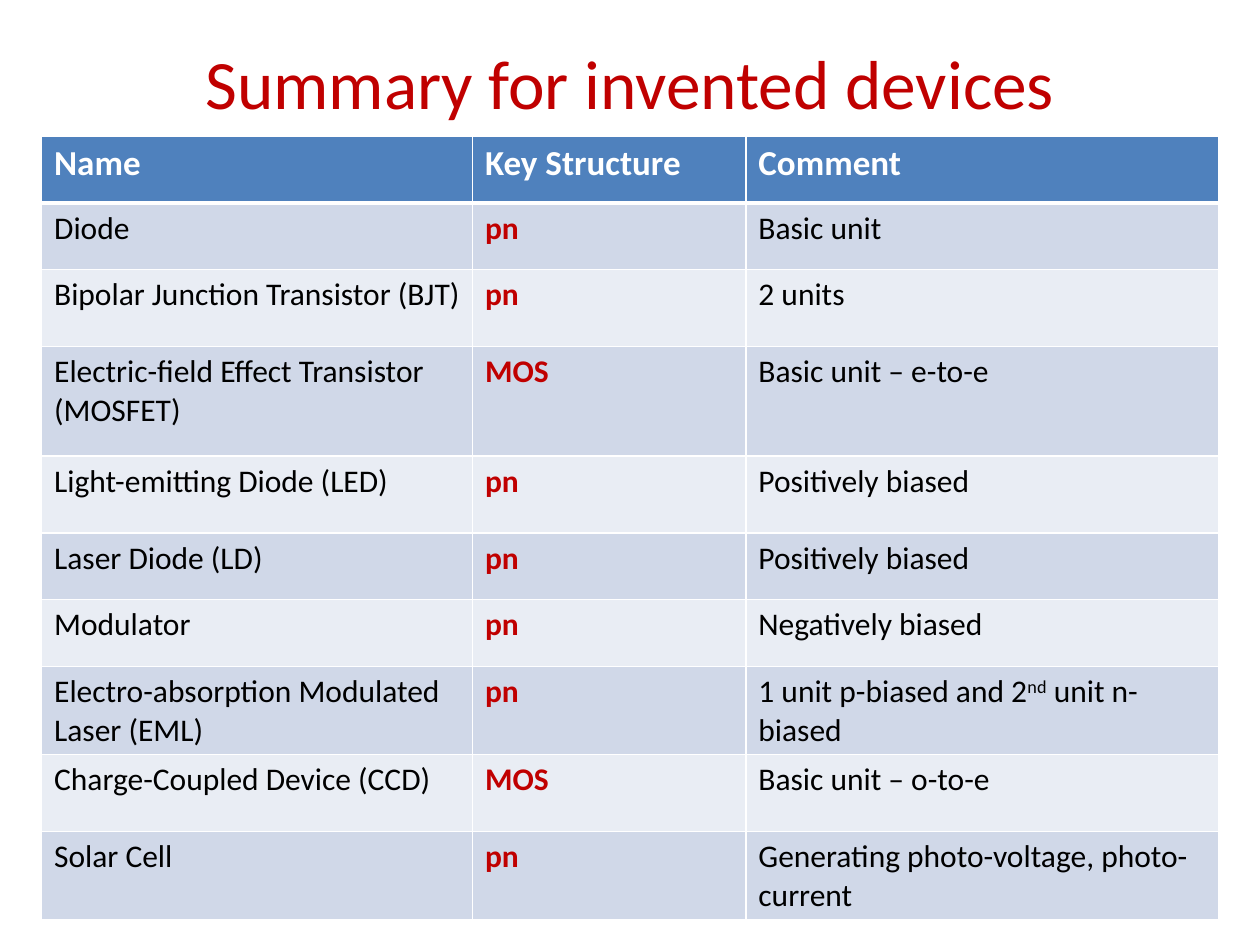
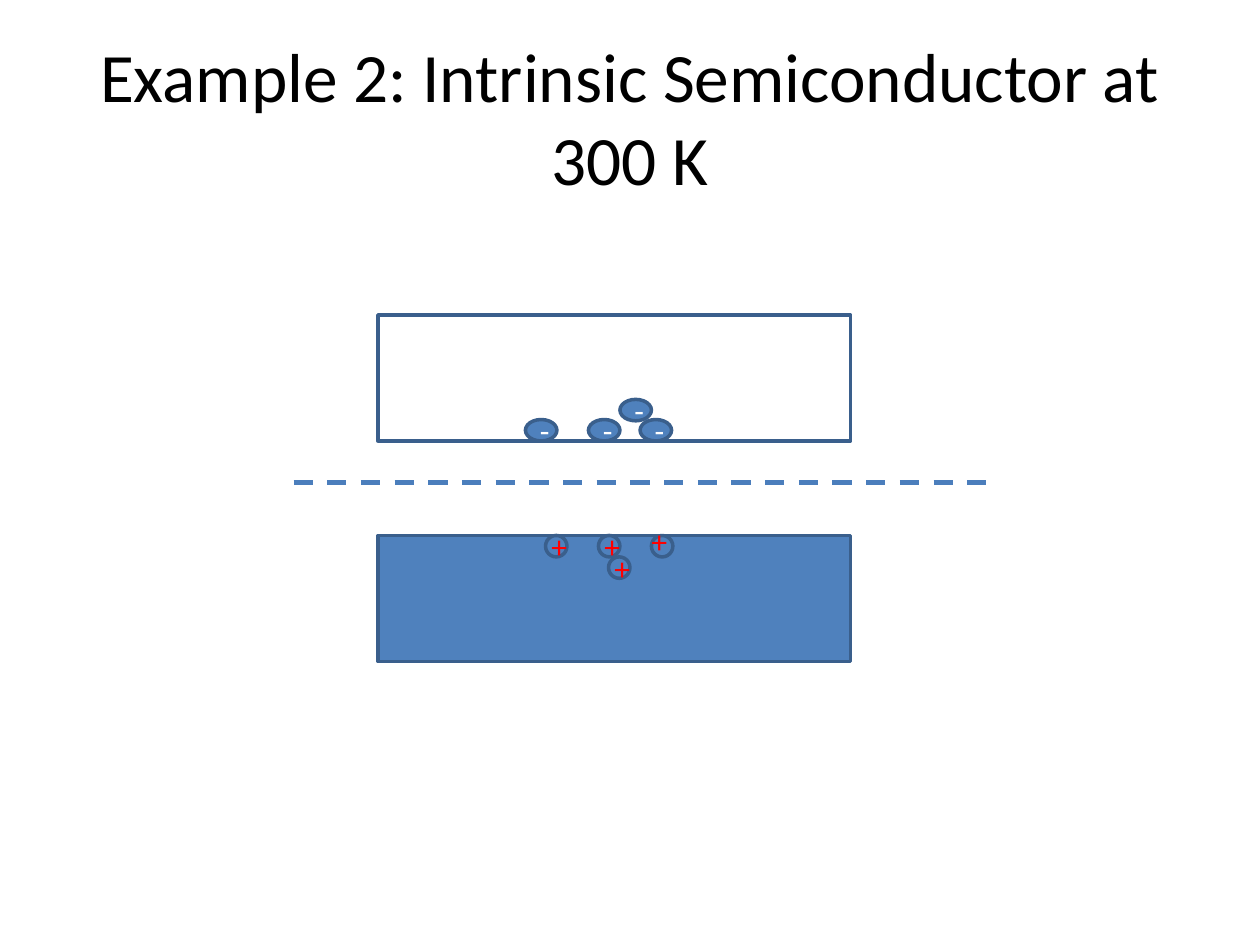
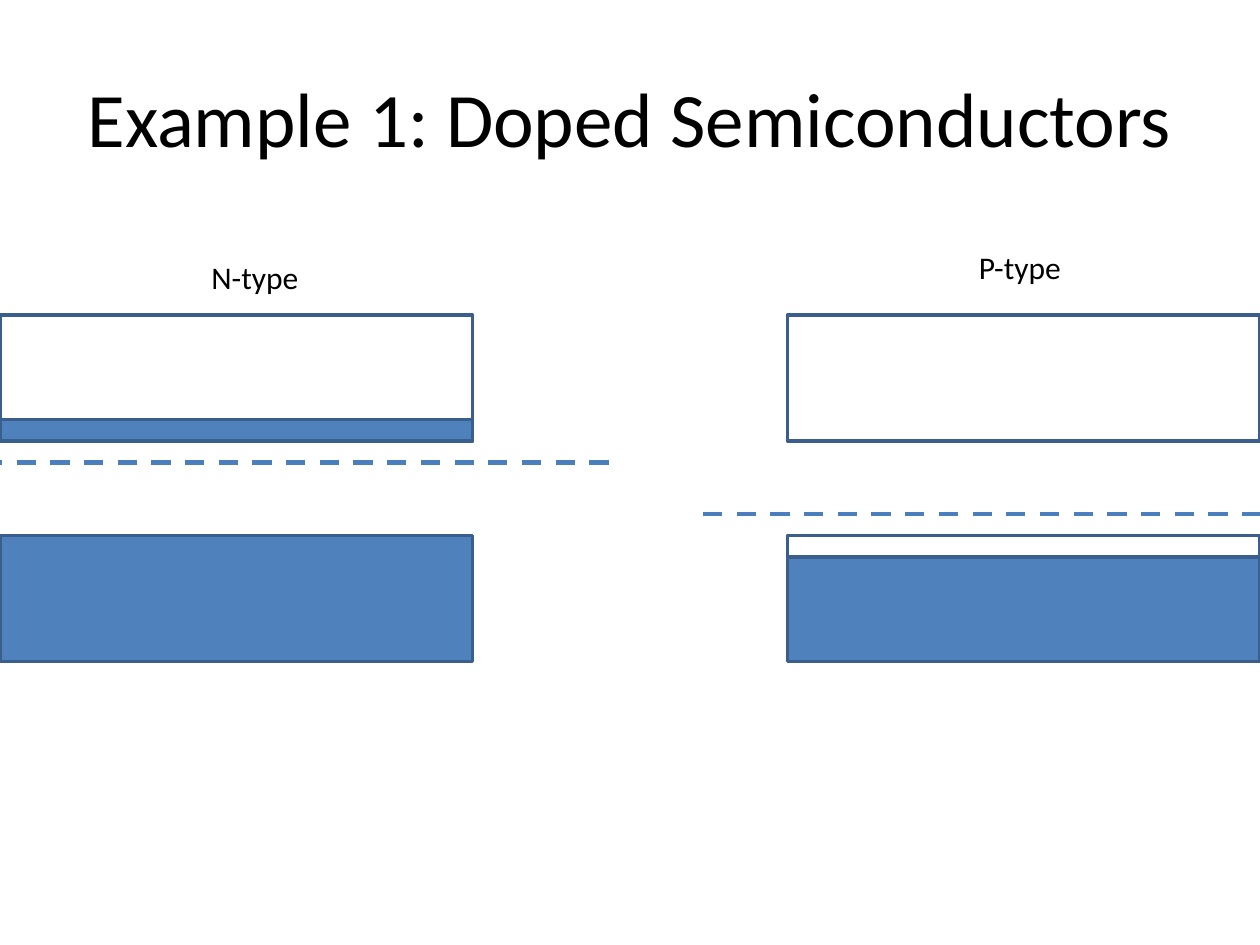
from dataclasses import dataclass

from pptx import Presentation
from pptx import util as u
from pptx.dml.color import RGBColor
from pptx.enum import dml, shapes, text
from pptx.oxml.ns import qn
from lxml import etree


@dataclass(frozen=True)
class Theme:
    font: str = "Calibri"
    black: str = "000000"
    white: str = "FFFFFF"
    accent: str = "C00000"
    hole: str = "FF0000"
    band: str = "4F81BD"
    outline: str = "3A5F8C"
    fermi: str = "4B7EBC"
    odd_row: str = "D0D8E8"
    even_row: str = "E9EDF4"
    title: float = 39.6
    large_title: float = 44
    header: float = 20
    body: float = 18
    outline_width: float = 2
    fermi_width: float = 2.75


THEME = Theme()
CENTER = text.PP_ALIGN.CENTER

# Band geometry, in inches from the diagram's corner
BAND_W, BAND_H = 3.75, 1
VALENCE_Y = 1.75
STRIP_H = 0.17
FERMI_OVERHANG, FERMI_LENGTH = 0.67, 5.5

COLUMN_WIDTHS = (3.42, 2.17, 3.75)
ROW_HEIGHTS = (0.53, 0.53, 0.61, 0.87, 0.61, 0.53, 0.53, 0.69, 0.61, 0.61)
DEVICES = (
    ("Name", "Key Structure", "Comment"),
    ("Diode", "pn", "Basic unit"),
    ("Bipolar Junction Transistor (BJT)", "pn", "2 units"),
    ("Electric-field Effect Transistor\n(MOSFET)", "MOS", "Basic unit – e-to-e"),
    ("Light-emitting Diode (LED)", "pn", "Positively biased"),
    ("Laser Diode (LD)", "pn", "Positively biased"),
    ("Modulator", "pn", "Negatively biased"),
    ("Electro-absorption Modulated Laser (EML)", "pn",
     "1 unit p-biased and 2^nd^ unit n-biased"),
    ("Charge-Coupled Device (CCD)", "MOS", "Basic unit – o-to-e"),
    ("Solar Cell", "pn", "Generating photo-voltage, photo-current"),
)


def inches(*lengths):
    return [u.Inches(length) for length in lengths]


def apply(target, formats):
    for name, value in formats.items():
        setattr(target, name, value)


def write(frame, content, size, color, bold=False, align=None):
    """Fill a text frame; a newline starts a paragraph, ^marks^ raise text."""
    for index, line in enumerate(content.split("\n")):
        paragraph = frame.paragraphs[0] if index == 0 else frame.add_paragraph()
        paragraph.alignment = align
        for part, piece in enumerate(line.split("^")):
            run = paragraph.add_run()
            run.text = piece
            apply(run.font, {"name": THEME.font, "size": u.Pt(size), "bold": bold})
            run.font.color.rgb = RGBColor.from_string(color)
            if part % 2:
                run.font._element.set("baseline", "30000")


def add_title(slide, content, height=1.25, size=THEME.title, color=THEME.black):
    frame = slide.shapes.add_textbox(*inches(0.5, 0.3, 9, height)).text_frame
    apply(frame, {"word_wrap": True, "vertical_anchor": text.MSO_ANCHOR.MIDDLE})
    write(frame, content, size, color, align=CENTER)


def add_label(slide, content, left, top, width):
    frame = slide.shapes.add_textbox(*inches(left, top, width, 0.4)).text_frame
    apply(frame, {"word_wrap": False,
                  "auto_size": text.MSO_AUTO_SIZE.SHAPE_TO_FIT_TEXT})
    write(frame, content, THEME.body, THEME.black)


def add_outlined(parent, kind, box, fill=None):
    part = parent.add_shape(kind, *inches(*box))
    part.shadow.inherit = False
    if fill:
        part.fill.solid()
        part.fill.fore_color.rgb = RGBColor.from_string(fill)
    else:
        part.fill.background()
    part.line.color.rgb = RGBColor.from_string(THEME.outline)
    part.line.width = u.Pt(THEME.outline_width)
    return part


def add_band(parent, left, top, height=BAND_H, fill=None):
    add_outlined(parent, shapes.MSO_SHAPE.RECTANGLE, (left, top, BAND_W, height), fill)


def add_band_diagram(parent, left, top, fermi_y):
    """Filled valence band, empty conduction band and dashed Fermi level."""
    add_band(parent, left, top + VALENCE_Y, fill=THEME.band)
    add_band(parent, left, top)
    start, level = left - FERMI_OVERHANG, top + fermi_y
    fermi = parent.add_connector(shapes.MSO_CONNECTOR.STRAIGHT,
                                 *inches(start, level, start + FERMI_LENGTH, level))
    fermi.line.color.rgb = RGBColor.from_string(THEME.fermi)
    apply(fermi.line, {"width": u.Pt(THEME.fermi_width),
                       "dash_style": dml.MSO_LINE.DASH})
    etree.SubElement(fermi._element.spPr, qn("a:effectLst"))


def add_carrier(slide, sign, left, top, width, color, fill=None, rotation=0):
    carrier = add_outlined(slide.shapes, shapes.MSO_SHAPE.OVAL,
                           (left, top, width, 0.17), fill)
    carrier.rotation = rotation
    write(carrier.text_frame, sign, THEME.body, color, align=CENTER)


def set_borders(cell, widths):
    """Draw white cell borders, before the fill as the schema orders them."""
    properties = cell._tc.get_or_add_tcPr()
    for side, width in widths.items():
        border = etree.SubElement(properties, qn(f"a:ln{side}"), w=str(u.Pt(width)))
        paint = etree.SubElement(border, qn("a:solidFill"))
        etree.SubElement(paint, qn("a:srgbClr"), val=THEME.white)


def add_device_table(slide, left, top):
    table = slide.shapes.add_table(
        len(DEVICES), len(COLUMN_WIDTHS),
        *inches(left, top, sum(COLUMN_WIDTHS), sum(ROW_HEIGHTS))).table
    for column, width in zip(table.columns, COLUMN_WIDTHS):
        column.width = u.Inches(width)
    for row, height in zip(table.rows, ROW_HEIGHTS):
        row.height = u.Inches(height)

    for r, device in enumerate(DEVICES):
        is_header = r == 0
        row_fill = (THEME.band if is_header
                    else THEME.odd_row if r % 2 else THEME.even_row)
        for c, content in enumerate(device):
            cell = table.cell(r, c)
            set_borders(cell, {"L": 1, "R": 1, "T": 3 if r == 1 else 1,
                               "B": 3 if is_header else 1})
            cell.fill.solid()
            cell.fill.fore_color.rgb = RGBColor.from_string(row_fill)
            is_structure = c == 1
            color = (THEME.white if is_header
                     else THEME.accent if is_structure else THEME.black)
            write(cell.text_frame, content,
                  THEME.header if is_header else THEME.body,
                  color, bold=is_header or is_structure)


def build_summary(slide):
    add_title(slide, "Summary for invented devices", height=0.7, color=THEME.accent)
    add_device_table(slide, 0.33, 1.08)


def build_intrinsic(slide, left=3, top=2.5):
    add_title(slide, "Example 2: Intrinsic Semiconductor at 300 K")
    add_band_diagram(slide.shapes.add_group_shape().shapes, left, top, fermi_y=1.33)
    # Electrons at the bottom of the conduction band
    for x, y in ((1.67, 0.83), (2.08, 0.83), (1.92, 0.67), (1.17, 0.83)):
        add_carrier(slide, "-", left + x, top + y, 0.25, THEME.white, THEME.band)
    # Holes at the top of the valence band
    for x, y, rotation in ((1.83, 0.17, 0), (2.17, 0, 180), (1.33, 0, 0), (1.75, 0, 0)):
        add_carrier(slide, "+", left + x, top + VALENCE_Y + y, 0.17, THEME.hole,
                    rotation=rotation)


def build_doped(slide, top=2.5):
    n_left, p_left = 0, 6.25
    add_title(slide, "Example 1: Doped Semiconductors", size=THEME.large_title)
    add_band_diagram(slide.shapes, n_left, top, fermi_y=1.17)
    add_band_diagram(slide.shapes, p_left, top, fermi_y=1.58)
    # Doping: electrons fill the conduction edge, holes empty the valence edge
    add_band(slide.shapes, n_left, top + BAND_H - STRIP_H, STRIP_H, THEME.band)
    add_band(slide.shapes, p_left, top + VALENCE_Y, STRIP_H, THEME.white)
    add_label(slide, "N-type", n_left + 1.58, top - 0.5, 0.9)
    add_label(slide, "P-type", p_left + 1.42, top - 0.58, 0.87)


def main():
    deck = Presentation()
    deck.slide_width, deck.slide_height = inches(10, 7.5)
    blank = deck.slide_layouts[6]
    for build in (build_summary, build_intrinsic, build_doped):
        build(deck.slides.add_slide(blank))
    deck.save("out.pptx")


if __name__ == "__main__":
    main()
